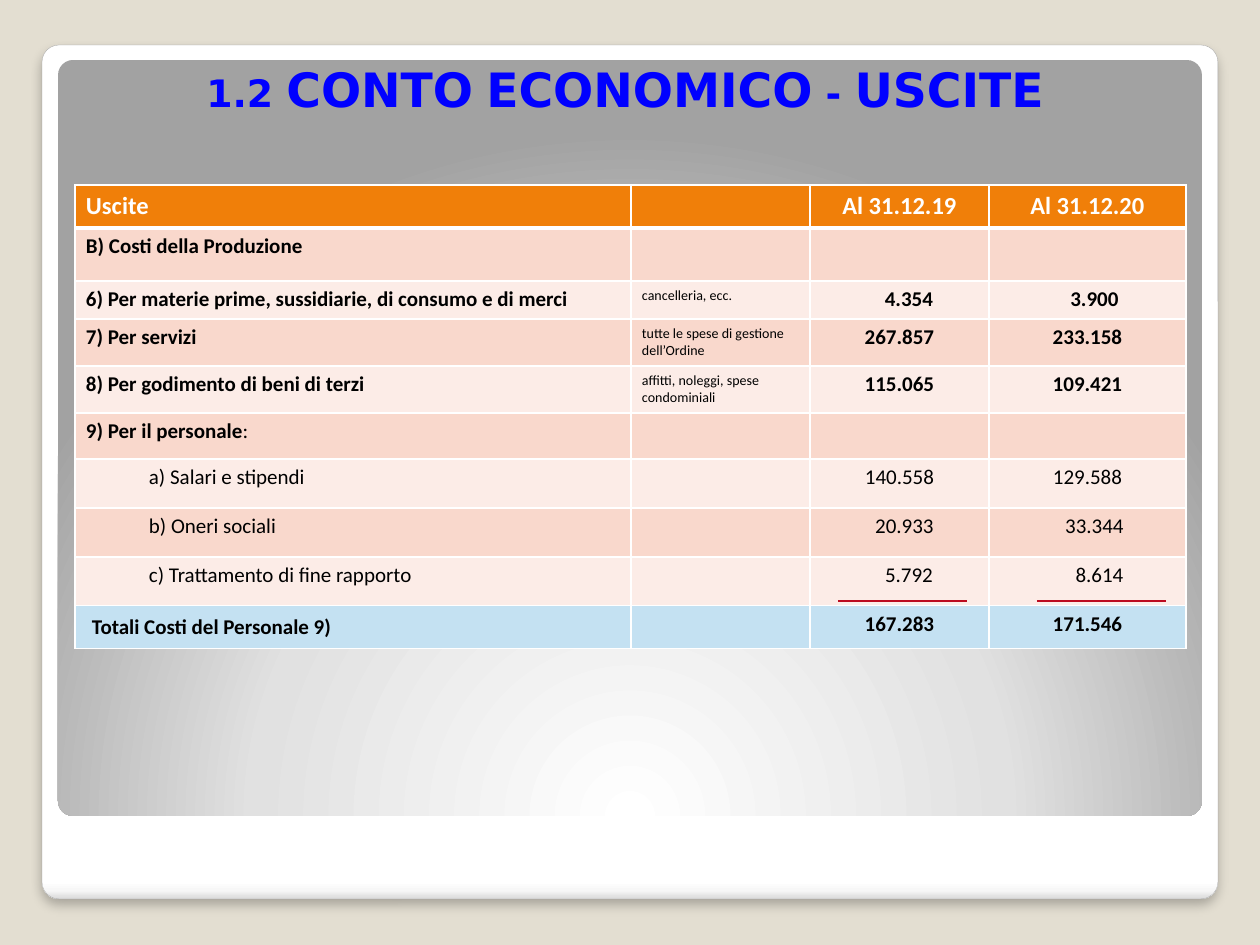
from lxml.etree import SubElement
from pptx import Presentation
from pptx.dml.color import RGBColor
from pptx.enum.shapes import MSO_CONNECTOR, MSO_SHAPE
from pptx.enum.text import MSO_ANCHOR, PP_ALIGN
from pptx.oxml.ns import qn
from pptx.util import Pt

PX = 7257  # EMU in one px, 126 px to the inch


def rgb(code):
    return RGBColor.from_string(code)


def blend(shape, stops):
    """Give the shape an empty gradient with these stops and return it."""
    shape.fill.gradient()
    grad = shape.element.spPr.find(qn("a:gradFill"))
    grad.clear()
    grad.set("rotWithShape", "1")
    items = SubElement(grad, qn("a:gsLst"))
    for place, code in stops:
        stop = SubElement(items, qn("a:gs"), pos=str(place * 1000))
        SubElement(stop, qn("a:srgbClr"), val=code)
    return grad


deck = Presentation()
deck.slide_width, deck.slide_height = 1260 * PX, 945 * PX
slide = deck.slides.add_slide(deck.slide_layouts[6])
slide.background.fill.solid()
slide.background.fill.fore_color.rgb = rgb("E3DED1")

# Card and inner panel
card, panel = [
    slide.shapes.add_shape(MSO_SHAPE.ROUNDED_RECTANGLE, *[n * PX for n in box])
    for box in ((42, 45, 1176, 854), (58, 60, 1144, 756))
]
for shape in (card, panel):
    shape.adjustments[0] = 0.02
    shape.shadow.inherit = False
grad = blend(card, [(0, "FFFFFF"), (98, "FFFFFF"), (99, "F7F7F7"), (100, "DADADA")])
SubElement(grad, qn("a:lin"), ang="5400000", scaled="0")
card.line.color.rgb = rgb("A4A4A4")
card.line.width = Pt(0.16)
glow = SubElement(card.element.spPr.find(qn("a:effectLst")), qn("a:outerShdw"),
                  blurRad=str(Pt(6)), dist=str(Pt(4)), dir="5400000",
                  algn="tl", rotWithShape="0")
tone = SubElement(glow, qn("a:srgbClr"), val="000000")
SubElement(tone, qn("a:alpha"), val="25000")

grad = blend(panel, [(0, "FFFFFF"), (55, "E1E1E1"), (100, "A2A2A2")])
focus = SubElement(grad, qn("a:path"), path="circle")
SubElement(focus, qn("a:fillToRect"), l="50000", t="175000", r="50000", b="-75000")
panel.line.fill.background()

# Table: label, bold label, note, two values, left indents of the values
rows = [
    ("Uscite", True, "", "Al 31.12.19", "Al 31.12.20", 0, 0),
    ("B) Costi della Produzione", True, "", "", "", 0, 0),
    ("6) Per materie prime, sussidiarie, di consumo e di merci", True,
     "cancelleria, ecc.", "4.354", "3.900", 19, 14),
    ("7) Per servizi", True, "tutte le spese di gestione dell’Ordine",
     "267.857", "233.158", 0, 0),
    ("8) Per godimento di beni di terzi", True,
     "affitti, noleggi, spese condominiali", "115.065", "109.421", 0, 0),
    ("9) Per il personale", True, "", "", "", 0, 0),
    ("a) Salari e stipendi", False, "", "140.558", "129.588", 0, 0),
    ("b) Oneri sociali", False, "", "20.933", "33.344", 10, 14),
    ("c) Trattamento di fine rapporto", False, "", "5.792", "8.614", 19, 24),
    ("Totali Costi del Personale 9)", True, "", "167.283", "171.546", 0, 0),
]
wide = [556, 179, 179, 197]
high = [43, 53, 38, 47, 47, 46, 49, 49, 49, 43]
last = len(rows) - 1
table = slide.shapes.add_table(len(rows), len(wide), 75 * PX, 185 * PX,
                               sum(wide) * PX, sum(high) * PX).table
table.horz_banding = False
for col, size in zip(table.columns, wide):
    col.width = size * PX
for row, size in zip(table.rows, high):
    row.height = size * PX

for r, (label, bold, note, old, new, *shift) in enumerate(rows):
    back = {0: "F07F09", last: "C4E1F2"}.get(r, ("FCECE7", "F9D8CC")[r % 2])
    inset = 6 if r == last else 0 if bold else 63
    for c, text in enumerate((label, note, old, new)):
        cell = table.cell(r, c)
        # Borders go in ahead of the fill
        props = cell._tc.get_or_add_tcPr()
        for side in ("lnL", "lnR", "lnT", "lnB"):
            thick = (side, r) in (("lnB", 0), ("lnT", 1))
            edge = SubElement(props, qn("a:" + side), w=str(Pt(3 if thick else 1)))
            SubElement(SubElement(edge, qn("a:solidFill")), qn("a:srgbClr"), val="FFFFFF")
        cell.fill.solid()
        cell.fill.fore_color.rgb = rgb(back)
        cell.margin_left = cell.margin_right = 11 * PX
        cell.margin_top = cell.margin_bottom = 6 * PX
        if r == last and c == 0:
            cell.vertical_anchor = MSO_ANCHOR.MIDDLE
        para = cell.text_frame.paragraphs[0]
        if not text:
            SubElement(para._p, qn("a:endParaRPr"), sz="800")
            continue
        if c > 1:
            para.alignment = PP_ALIGN.CENTER
        left = (inset, 0, *shift)[c]
        if left:
            para._p.get_or_add_pPr().set("marL", str(left * PX))
        look = {"name": "Calibri", "size": Pt(14 if r == 0 else 8 if c == 1 else 12),
                "bold": bold and c != 1}
        parts = [(text, look)]
        if (r, c) == (5, 0):
            parts.append((":", {**look, "bold": False}))
        for word, style in parts:
            run = para.add_run()
            run.text = word
            for key, value in style.items():
                setattr(run.font, key, value)
            run.font.color.rgb = rgb("000000" if r else "FFFFFF")

# Title
title = slide.shapes.add_textbox(84 * PX, 55 * PX, 1082 * PX, 68 * PX)
frame = title.text_frame
frame.word_wrap = True
frame.vertical_anchor = MSO_ANCHOR.BOTTOM
para = frame.paragraphs[0]
para.alignment = PP_ALIGN.CENTER
run = para.add_run()
run.text = "1.2 CONTO ECONOMICO - USCITE"
for key, value in {"name": "DejaVu Sans", "size": Pt(27), "bold": True}.items():
    setattr(run.font, key, value)
run.font.color.rgb = rgb("0000FF")
run._r.get_or_add_rPr().set("cap", "small")

# Sum lines above the totals
for x in (838, 1037):
    rule = slide.shapes.add_connector(MSO_CONNECTOR.STRAIGHT, x * PX, 601 * PX,
                                      (x + 129) * PX, 601 * PX)
    rule.line.color.rgb = rgb("BC0B1F")
    rule.line.width = Pt(0.75)
    SubElement(rule._element.spPr, qn("a:effectLst"))

deck.save("out.pptx")
